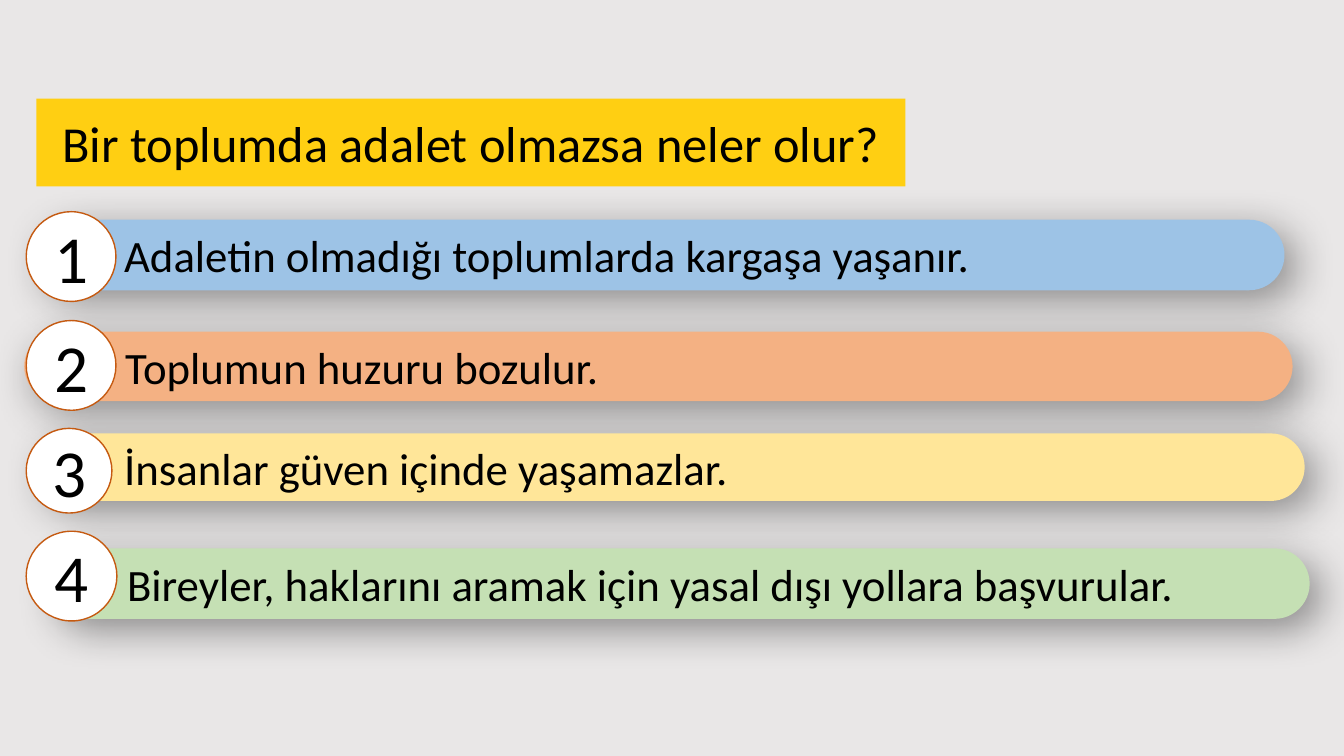
import dataclasses

import lxml.etree
import pptx
import pptx.dml.color
import pptx.enum.shapes
import pptx.enum.text
import pptx.oxml.ns
import pptx.util

EMU_PER_PX = 9144  # 100 px to the inch
SHAPES = pptx.enum.shapes.MSO_SHAPE
ALIGN = pptx.enum.text.PP_ALIGN


@dataclasses.dataclass(frozen=True)
class Theme:
    font: str = "Calibri"
    background: str = "E9E7E7"
    text: str = "000000"
    title_fill: str = "FFCF12"
    badge_fill: str = "FFFFFF"
    badge_line: str = "C55A11"
    title_size: int = 36
    answer_size: int = 32
    badge_size: int = 48


THEME = Theme()

TITLE = "Bir toplumda adalet olmazsa neler olur?"
TITLE_BOX = (36, 98, 862, 87)

# Text, bar colour, bar box, left edge of the text, badge box
ANSWERS = [
    ("Adaletin olmadığı toplumlarda kargaşa yaşanır.", "9DC3E6",
     (33, 218, 1241, 70), 123, (26, 210, 89, 89)),
    ("Toplumun huzuru bozulur.", "F4B183",
     (24, 329, 1258, 69), 124, (26, 318, 89, 89)),
    ("İnsanlar güven içinde yaşamazlar.", "FFE699",
     (33, 430, 1261, 67), 123, (26, 425, 85, 84)),
    ("Bireyler, haklarını aramak için yasal dışı yollara başvurular.", "C5E0B4",
     (46, 544, 1253, 70), 126, (26, 527, 90, 89)),
]


def px(length):
    return pptx.util.Emu(round(length * EMU_PER_PX))


def rgb(value):
    return pptx.dml.color.RGBColor.from_string(value)


def set_values(target, values):
    for name, value in values.items():
        setattr(target, name, value)


def add_filled_shape(slide, kind, box, fill):
    shape = slide.shapes.add_shape(kind, *map(px, box))
    shape.shadow.inherit = False
    shape.fill.solid()
    shape.fill.fore_color.rgb = rgb(fill)
    shape.line.fill.background()
    return shape


def write_text(shape, text, size, alignment, **frame_values):
    frame = shape.text_frame
    set_values(frame, {
        "word_wrap": True,
        "vertical_anchor": pptx.enum.text.MSO_ANCHOR.MIDDLE,
        **frame_values,
    })
    paragraph = frame.paragraphs[0]
    paragraph.alignment = alignment
    run = paragraph.add_run()
    run.text = text
    set_values(run.font, {"name": THEME.font, "size": pptx.util.Pt(size)})
    run.font.color.rgb = rgb(THEME.text)


def add_soft_shadow(shape):
    """Black shadow at 40% opacity, blurred 30 pt, 10 pt away at 45 degrees."""
    qn = pptx.oxml.ns.qn
    effects = shape._element.spPr.find(qn("a:effectLst"))
    shadow = lxml.etree.SubElement(
        effects, qn("a:outerShdw"), blurRad=str(pptx.util.Pt(30)),
        dist=str(pptx.util.Pt(10)), dir=str(45 * 60000), algn="tl", rotWithShape="0")
    color = lxml.etree.SubElement(shadow, qn("a:srgbClr"), val="000000")
    lxml.etree.SubElement(color, qn("a:alpha"), val="40000")


def add_title(slide, box):
    title = add_filled_shape(slide, SHAPES.RECTANGLE, box, THEME.title_fill)
    write_text(title, TITLE, THEME.title_size, ALIGN.CENTER)


def add_answer_bar(slide, box, text, fill, text_left):
    bar = add_filled_shape(slide, SHAPES.ROUNDED_RECTANGLE, box, fill)
    bar.adjustments[0] = 0.5
    add_soft_shadow(bar)
    left, _, _, height = box
    corner_inset = 0.29 * height / 2  # text area of a fully rounded bar
    write_text(bar, text, THEME.answer_size, ALIGN.LEFT,
               margin_left=px(text_left - left - corner_inset))


def add_number_badge(slide, box, number):
    badge = add_filled_shape(slide, SHAPES.OVAL, box, THEME.badge_fill)
    badge.line.color.rgb = rgb(THEME.badge_line)
    badge.line.width = pptx.util.Pt(1)
    write_text(badge, str(number), THEME.badge_size, ALIGN.CENTER)


def add_question_slide(presentation):
    slide = presentation.slides.add_slide(presentation.slide_layouts[6])
    slide.background.fill.solid()
    slide.background.fill.fore_color.rgb = rgb(THEME.background)
    for text, fill, bar_box, text_left, _ in ANSWERS:
        add_answer_bar(slide, bar_box, text, fill, text_left)
    for number, (*_, badge_box) in enumerate(ANSWERS, start=1):
        add_number_badge(slide, badge_box, number)
    add_title(slide, TITLE_BOX)


def main():
    presentation = pptx.Presentation()
    set_values(presentation, {"slide_width": px(1333), "slide_height": px(750)})
    add_question_slide(presentation)
    presentation.save("out.pptx")


if __name__ == "__main__":
    main()
